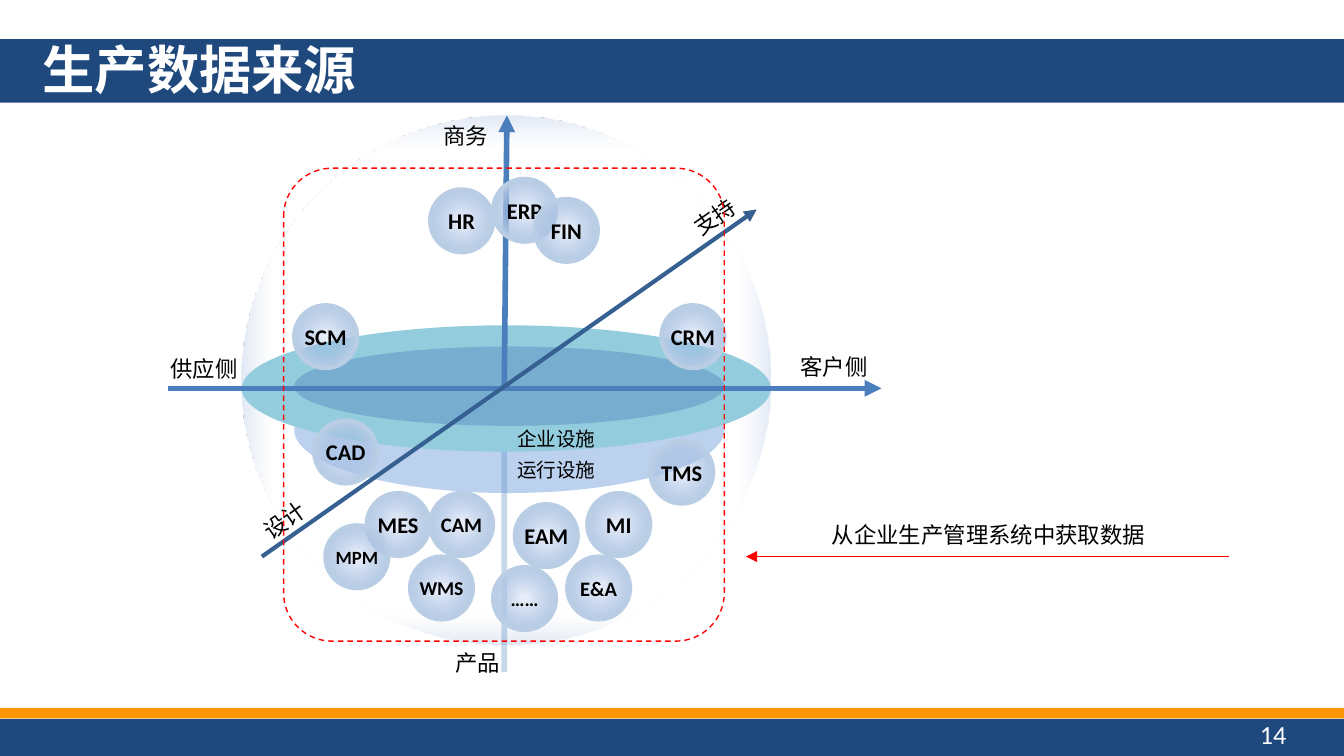
from lxml.etree import SubElement
from pptx import Presentation
from pptx.dml.color import RGBColor
from pptx.enum.dml import MSO_LINE as Dash
from pptx.enum.shapes import MSO_CONNECTOR as Link, MSO_SHAPE as Form
from pptx.enum.text import MSO_ANCHOR as Anchor, PP_ALIGN as Align
from pptx.oxml.ns import qn
from pptx.util import Cm, Pt

COLORS = {
    "navy": "1F497D", "orange": "FF9500", "white": "FFFFFF", "black": "000000",
    "axis": "4B7EBC", "product": "4A7EBB", "diagonal": "376092", "red": "FF0000",
    "operation": "558ED5", "enterprise": "93CDDD", "core": "4F81BD",
    "bubble": "B9CDE5", "glow": "9AB5E4", "haze": "E1E8F5",
}
CHINESE, LATIN = "Noto Sans CJK SC", "Calibri"
SPHERE_STOPS = [(50, "white", 100), (88, "white", 60), (100, "haze", 100)]
BUBBLE_STOPS = [(7, "glow", 23), (69, "bubble", 100), (100, "haze", 100)]
BUBBLE_SIZE = 1.19


def rgb(color):
    return RGBColor.from_string(COLORS[color])


def add_alpha(color_element, opacity):
    if opacity < 100:
        SubElement(color_element, qn("a:alpha"), val=str(opacity * 1000))


def write_text(frame, text, size=12, font=CHINESE, color="black", bold=False,
               align=Align.LEFT, anchor=Anchor.TOP, side_inset=0.25):
    frame.word_wrap = True
    frame.vertical_anchor = anchor
    frame.margin_left = frame.margin_right = Cm(side_inset)
    paragraph = frame.paragraphs[0]
    paragraph.alignment = align
    run = paragraph.add_run()
    run.text = text
    run.font.size = Pt(size)
    run.font.name = font
    run.font.bold = bold
    run.font.color.rgb = rgb(color)
    SubElement(run.font._element, qn("a:ea"), typeface=font)


class Canvas:
    def __init__(self, slide):
        self.slide = slide

    def shape(self, form, x, y, width, height, fill=None, opacity=100, line=None, weight=1):
        shape = self.slide.shapes.add_shape(form, Cm(x), Cm(y), Cm(width), Cm(height))
        shape.shadow.inherit = False
        if fill:
            shape.fill.solid()
            shape.fill.fore_color.rgb = rgb(fill)
            add_alpha(shape._element.spPr.find(qn("a:solidFill"))[0], opacity)
        else:
            shape.fill.background()
        if line:
            shape.line.color.rgb = rgb(line)
            shape.line.width = Pt(weight)
        else:
            shape.line.fill.background()
        return shape

    def radial(self, x, y, size, stops, route, **outline):
        ball = self.shape(Form.OVAL, x, y, size, size, "white", **outline)
        solid = ball._element.spPr.find(qn("a:solidFill"))
        gradient = solid.makeelement(qn("a:gradFill"), {"rotWithShape": "1"})
        stop_list = SubElement(gradient, qn("a:gsLst"))
        for position, color, opacity in stops:
            stop = SubElement(stop_list, qn("a:gs"), pos=str(position * 1000))
            add_alpha(SubElement(stop, qn("a:srgbClr"), val=COLORS[color]), opacity)
        center = SubElement(gradient, qn("a:path"), {"path": route})
        SubElement(center, qn("a:fillToRect"), dict.fromkeys("ltrb", "50000"))
        solid.getparent().replace(solid, gradient)
        return ball

    def bubble(self, text, x, y, size=12):
        ball = self.radial(x, y, BUBBLE_SIZE, BUBBLE_STOPS, "circle", line="bubble", weight=2.25)
        write_text(ball.text_frame, text, size=size, font=LATIN, bold=True,
                   align=Align.CENTER, anchor=Anchor.MIDDLE, side_inset=0)

    def label(self, text, x, y, width, height=0.76, rotation=0, **style):
        box = self.slide.shapes.add_textbox(Cm(x), Cm(y), Cm(width), Cm(height))
        box.rotation = rotation
        write_text(box.text_frame, text, **style)

    def line(self, start, end, color, weight, opacity=100, arrow=True):
        points = [Cm(value) for value in (*start, *end)]
        connector = self.slide.shapes.add_connector(Link.STRAIGHT, *points)
        connector.line.color.rgb = rgb(color)
        connector.line.width = Pt(weight)
        properties = connector._element.spPr
        outline = properties.find(qn("a:ln"))
        add_alpha(outline.find(qn("a:solidFill"))[0], opacity)
        if arrow:
            SubElement(outline, qn("a:tailEnd"), type="triangle")
        SubElement(properties, qn("a:effectLst"))


def main():
    deck = Presentation()
    deck.slide_width, deck.slide_height = Cm(25.4), Cm(14.29)
    canvas = Canvas(deck.slides.add_slide(deck.slide_layouts[6]))

    for y, height, color in [(0.74, 1.2, "navy"), (13.59, 0.7, "navy"), (13.38, 0.2, "orange")]:
        canvas.shape(Form.RECTANGLE, 0, y, 25.4, height, color)
    canvas.label("生产数据来源", 0.56, 0.79, 22.86, 1, size=28, color="white",
                 bold=True, anchor=Anchor.MIDDLE)
    canvas.label("14", 18.64, 13.49, 5.92, size=14, font=LATIN, color="white",
                 align=Align.RIGHT, anchor=Anchor.MIDDLE)

    canvas.radial(4.57, 2.18, 10, SPHERE_STOPS, "shape")
    center = (9.53, 7.34)
    canvas.line((9.53, 12.7), center, "product", 3, opacity=30, arrow=False)

    for text, x, y, width, rotation in [
        ("供应侧", 2.97, 6.58, 1.8, 0), ("设计", 4.7, 9.45, 1.38, 324.4),
        ("支持", 12.83, 3.71, 1.38, 325), ("商务", 8.13, 2.18, 1.38, 0),
        ("产品", 8.36, 12.14, 1.38, 0), ("客户侧", 14.88, 6.55, 1.8, 0),
    ]:
        canvas.label(text, x, y, width, rotation=rotation)

    for x, y, width, height, color, opacity in [
        (5.56, 6.93, 8.13, 2.39, "operation", 40),
        (4.57, 6.15, 10, 2.39, "enterprise", 100),
        (5.56, 6.55, 8.13, 1.5, "core", 40),
    ]:
        canvas.shape(Form.OVAL, x, y, width, height, color, opacity)
    for text, y in [("企业设施", 7.95), ("运行设施", 8.53)]:
        canvas.label(text, 9.53, y, 2.39, size=10.5)

    canvas.line((3.18, 7.34), (16.66, 7.34), "axis", 3)
    canvas.line(center, (9.58, 2.18), "axis", 3)
    canvas.line((4.95, 10.52), (14.3, 3.96), "diagonal", 2.25)

    for system in [
        ("HR", 8.13, 3.58), ("ERP", 9.32, 3.38), ("FIN", 10.11, 3.76),
        ("SCM", 5.56, 5.77), ("CAD", 5.94, 7.95), ("CRM", 12.5, 5.77),
        ("MES", 6.93, 9.32), ("TMS", 12.29, 8.33), ("EAM", 9.73, 9.53),
        ("MI", 11.1, 9.32), ("CAM", 8.13, 9.32, 11), ("WMS", 7.75, 10.52, 10.5),
        ("……", 9.32, 10.72, 10.5), ("MPM", 6.15, 9.93, 10), ("E&A", 10.72, 10.52, 11),
    ]:
        canvas.bubble(*system)

    canvas.label("从企业生产管理系统中获取数据", 15.47, 9.73, 6.73)
    scope = canvas.shape(Form.ROUNDED_RECTANGLE, 5.36, 3.18, 8.33, 8.94, line="red", weight=0.75)
    scope.adjustments[0] = 0.11
    scope.line.dash_style = Dash.DASH
    canvas.line((23.22, 10.52), (14.1, 10.52), "red", 0.75)

    deck.save("out.pptx")


if __name__ == "__main__":
    main()
